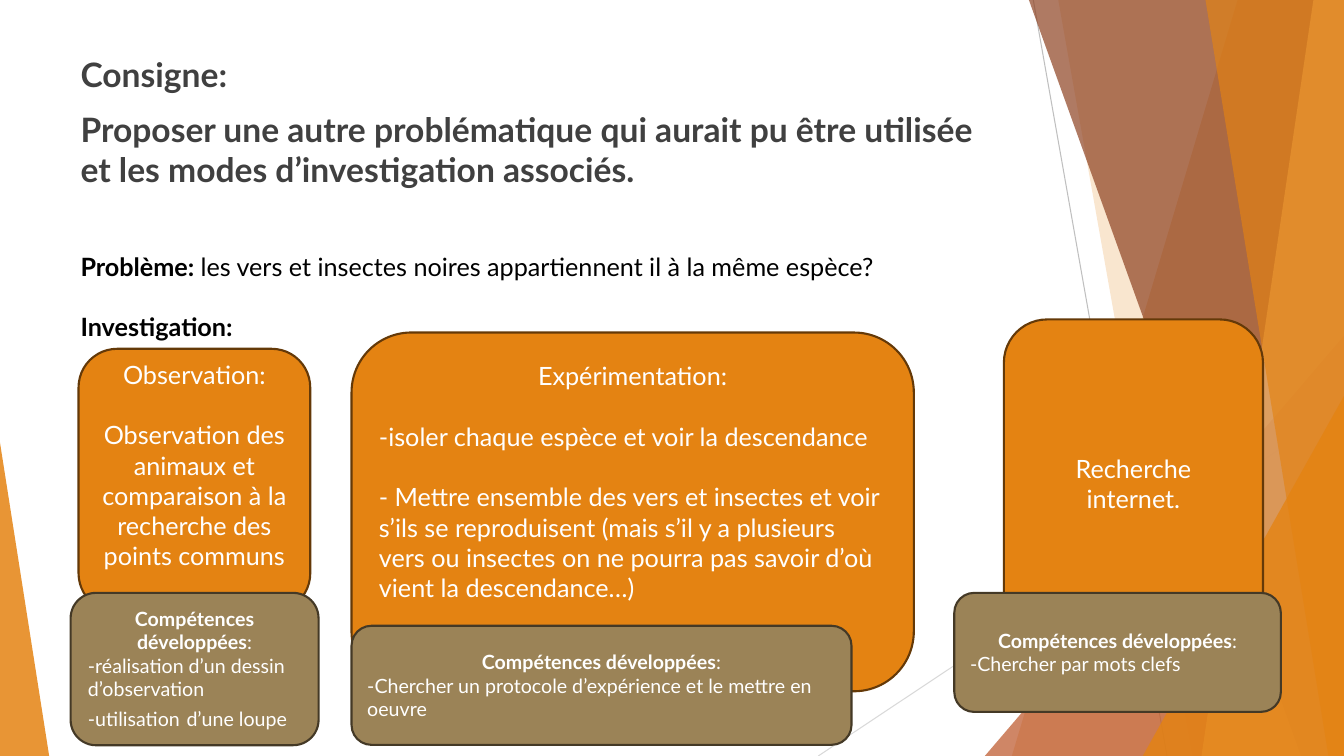
from pptx import Presentation
from pptx.dml.color import RGBColor
from pptx.enum.shapes import MSO_CONNECTOR, MSO_SHAPE
from pptx.enum.text import MSO_ANCHOR, PP_ALIGN
from pptx.oxml.ns import qn
from pptx.util import Cm, Pt
from lxml.etree import SubElement

ORANGE = RGBColor(0xE4, 0x83, 0x12)
LIGHT_ORANGE = RGBColor(0xF3, 0xB5, 0x6C)
RUST = RGBColor(0xBD, 0x58, 0x2C)
BROWN = RGBColor(0x8E, 0x42, 0x21)
DARK_ORANGE = RGBColor(0x64, 0x39, 0x08)
KHAKI = RGBColor(0x9B, 0x83, 0x57)
DARK_KHAKI = RGBColor(0x44, 0x39, 0x26)
GREY = RGBColor(0xBF, 0xBF, 0xBF)
PALE_GREY = RGBColor(0xD9, 0xD9, 0xD9)
CHARCOAL = RGBColor(0x40, 0x40, 0x40)
BLACK = RGBColor(0, 0, 0)
WHITE = RGBColor(0xFF, 0xFF, 0xFF)

WIDTH, HEIGHT = 33.87, 19.05
LINE_PT, LINE_CM = 21.6, 0.76
CENTER, LEFT = PP_ALIGN.CENTER, PP_ALIGN.LEFT

prs = Presentation()
prs.slide_width, prs.slide_height = Cm(WIDTH), Cm(HEIGHT)
s = prs.slides.add_slide(prs.slide_layouts[6])


def style_shape(sp, fill, line=None, opacity=100):
    sp.shadow.inherit = False
    sp.fill.solid()
    sp.fill.fore_color.rgb = fill
    if line is None:
        sp.line.fill.background()
    else:
        sp.line.color.rgb = line
        sp.line.width = Pt(1.5)
    if opacity < 100:
        clr = sp._element.spPr.find(qn("a:solidFill"))[0]
        SubElement(clr, qn("a:alpha")).set("val", str(opacity * 1000))


def write_text(tf, paragraphs, size, color):
    tf.word_wrap = True
    for i, (align, before, runs) in enumerate(paragraphs):
        p = tf.paragraphs[0] if i == 0 else tf.add_paragraph()
        p.alignment, p.space_before = align, Pt(before)
        for text, formats in runs:
            r = p.add_run()
            r.text = text
            r.font.color.rgb = color
            values = {"name": "Lato", "size": Pt(size), "bold": False, **formats}
            for name, value in values.items():
                setattr(r.font, name, value)


for x1, y1, x2, y2, color in [
    (26.04, 0, 29.41, HEIGHT, GREY),
    (WIDTH, 10.24, 20.62, HEIGHT, PALE_GREY),
]:
    ln = s.shapes.add_connector(MSO_CONNECTOR.STRAIGHT, Cm(x1), Cm(y1), Cm(x2), Cm(y2))
    ln.line.color.rgb, ln.line.width = color, Pt(0.75)
    SubElement(ln._element.spPr, qn("a:effectLst"))

for kind, geometry, color, opacity in [
    ("band", (31.19, 25.5), ORANGE, 30),
    ("band", (26.67, 30.05), ORANGE, 20),
    ("triangle", (24.82, 8.46, 9.05, 1), RUST, 72),
    ("band", (25.93, 32.79), BROWN, 70),
    ("band", (33.1, 30.28), LIGHT_ORANGE, 70),
    ("band", (30.38, 33.48), ORANGE, 65),
    ("triangle", (28.8, 9.98, 5.07, 1), ORANGE, 80),
    ("triangle", (0, 11.15, 1.24, 0), ORANGE, 85),
]:
    if kind == "band":
        top, bottom = geometry
        fb = s.shapes.build_freeform(Cm(top), 0)
        fb.add_line_segments([
            (Cm(WIDTH), 0), (Cm(WIDTH), Cm(HEIGHT)), (Cm(bottom), Cm(HEIGHT)),
        ])
        sp = fb.convert_to_shape()
    else:
        x, y, w, apex = geometry
        sp = s.shapes.add_shape(
            MSO_SHAPE.ISOSCELES_TRIANGLE, Cm(x), Cm(y), Cm(w), Cm(HEIGHT - y))
        sp.adjustments[0] = apex
    style_shape(sp, color, opacity=opacity)

BOLD = {"bold": True}
SKILLS = (CENTER, 0, [("Compétences développées", BOLD), (":", {})])

for y, w, h, size, color, paragraphs in [
    (1.24, 23.88, 4.65, 24, CHARCOAL, [
        (LEFT, 0, [("Consigne:", BOLD)]),
        (LEFT, 10, [("Proposer une autre problématique qui aurait pu être utilisée "
                     "et les modes d’investigation associés.", BOLD)]),
    ]),
    (6.2, 25.12, 3.33, 18, BLACK, [
        (LEFT, 0, [("Problème: ", BOLD),
                   ("les vers et insectes noires appartiennent il à la même espèce?", {})]),
        (LEFT, LINE_PT, [("Investigation:", BOLD)]),
    ]),
]:
    tf = s.shapes.add_textbox(Cm(1.78), Cm(y), Cm(w), Cm(h)).text_frame
    write_text(tf, paragraphs, size, color)

methods = [
    ((1.98, 8.79, 5.84, 6.63), 1, [
        (CENTER, 0, [("Observation:", {})]),
        (CENTER, LINE_PT, [("Observation des animaux et comparaison à la "
                            "recherche des points communs", {})]),
    ]),
    ((8.86, 8.38, 14.17, 9.04), 2, [
        (CENTER, 0, [("Expérimentation:", {})]),
        (LEFT, LINE_PT, [("-isoler chaque espèce et voir la descendance", {})]),
        (LEFT, LINE_PT, [("- Mettre ensemble des vers et insectes et voir s’ils se "
                          "reproduisent (mais s’il y a plusieurs vers ou insectes on ne "
                          "pourra pas savoir d’où vient la descendance…)", {})]),
    ]),
    ((25.3, 8.05, 6.53, 9.04), 1, [(CENTER, 0, [("Recherche internet.", {})])]),
]
skills = [
    ((1.78, 14.94, 6.25, 3.84), 0, [
        SKILLS,
        (LEFT, 0, [("-réalisation d’un dessin d’observation", {})]),
        (LEFT, 0, [("-utilisation", {}), (" ", {"size": Pt(18)}), ("d’une loupe", {})]),
    ]),
    ((8.86, 15.77, 12.6, 3), 0, [
        SKILLS,
        (LEFT, 0, [("-Chercher un protocole d’expérience et le mettre en oeuvre", {})]),
    ]),
    ((24.05, 14.94, 8.23, 3), 0, [
        SKILLS,
        (LEFT, 0, [("-Chercher par mots clefs", {})]),
    ]),
]
for boxes, fill, line, size in [
    (methods, ORANGE, DARK_ORANGE, 18),
    (skills, KHAKI, DARK_KHAKI, 14),
]:
    for place, lines_below, paragraphs in boxes:
        sp = s.shapes.add_shape(MSO_SHAPE.ROUNDED_RECTANGLE, *[Cm(v) for v in place])
        style_shape(sp, fill, line)
        tf = sp.text_frame
        tf.vertical_anchor = MSO_ANCHOR.MIDDLE
        tf.margin_bottom = Cm(0.13 + lines_below * LINE_CM)
        write_text(tf, paragraphs, size, WHITE)

prs.save("out.pptx")
